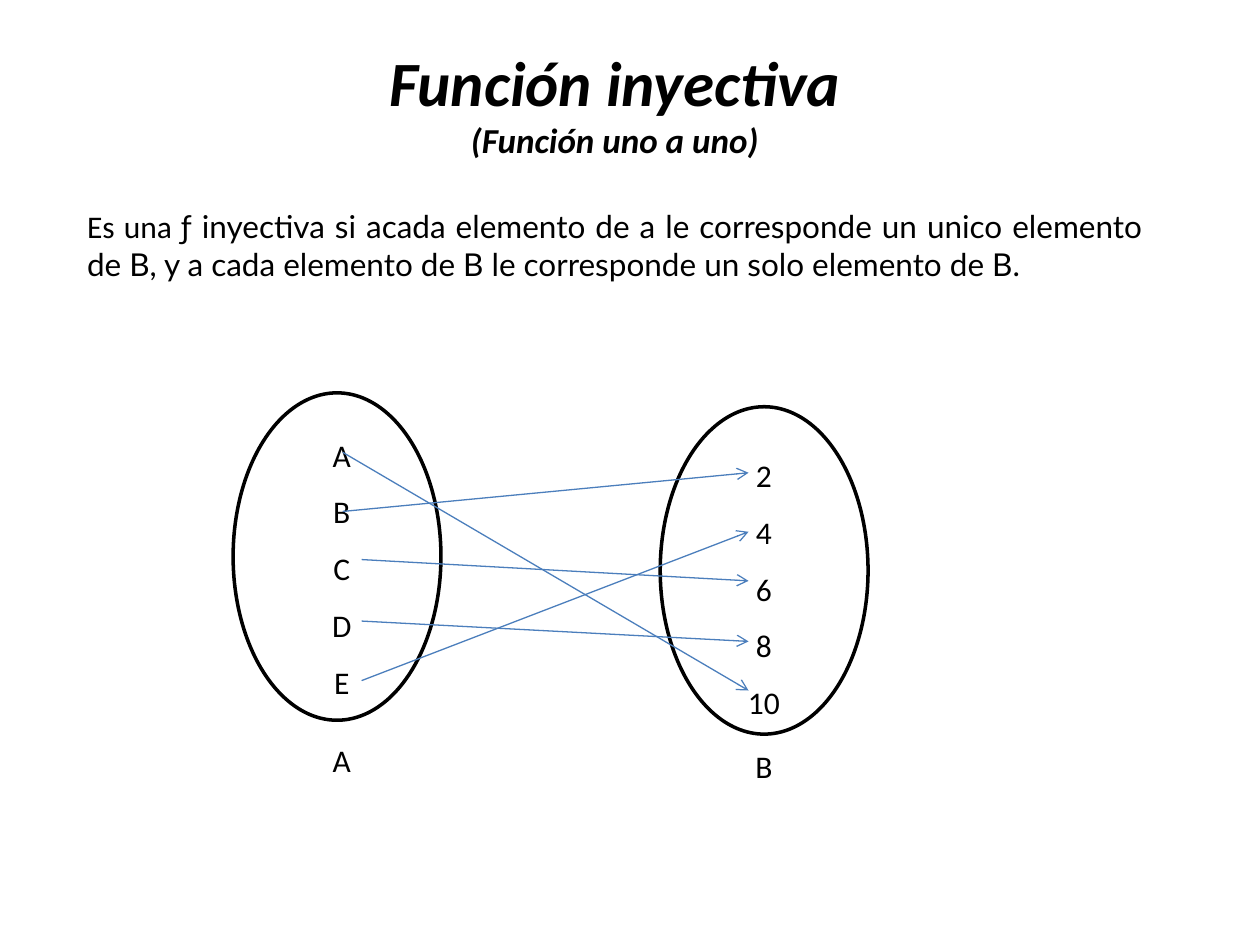
from lxml.etree import SubElement
from pptx import Presentation
from pptx.dml.color import RGBColor
from pptx.enum.shapes import MSO_CONNECTOR, MSO_SHAPE
from pptx.enum.text import MSO_ANCHOR, MSO_AUTO_SIZE, PP_ALIGN
from pptx.oxml.ns import qn
from pptx.util import Cm, Pt

BLACK = RGBColor(0x00, 0x00, 0x00)
BLUE = RGBColor(0x4B, 0x7E, 0xBC)


def place(shape, left, top, width, height):
    shape.left, shape.top = Cm(left), Cm(top)
    shape.width, shape.height = Cm(width), Cm(height)


def write(para, text, align=PP_ALIGN.CENTER, **changes):
    para.alignment = align
    span = para.add_run()
    span.text = text
    span.font.color.rgb = BLACK
    values = {"name": "Calibri", "size": Pt(18), **changes}
    for name, value in values.items():
        setattr(span.font, name, value)


deck = Presentation()
deck.slide_width, deck.slide_height = Cm(25.4), Cm(19.05)
page = deck.slides.add_slide(deck.slide_layouts[1])
title, body = page.placeholders

# Title and subtitle
place(title, 1.5, 0.74, 21.79, 2.64)
frame = title.text_frame
frame.auto_size = MSO_AUTO_SIZE.NONE
frame.vertical_anchor = MSO_ANCHOR.TOP
write(frame.paragraphs[0], "Función inyectiva", size=Pt(36), bold=True, italic=True)
write(frame.add_paragraph(), "(Función uno a uno)", size=Pt(20), bold=True, italic=True)

# Definition, without bullet or indent
place(body, 1.5, 4.04, 21.79, 2.57)
body.text_frame.auto_size = MSO_AUTO_SIZE.NONE
para = body.text_frame.paragraphs[0]
para.space_before = Pt(0)
properties = para._p.get_or_add_pPr()
properties.set("marL", "0")
properties.set("indent", "0")
SubElement(properties, qn("a:buNone"))
write(para, "Es una ", PP_ALIGN.JUSTIFY)
write(para, "ƒ inyectiva si acada elemento de a le corresponde un unico elemento "
      "de B, y a cada elemento de B le corresponde un solo elemento de B.",
      PP_ALIGN.JUSTIFY, name="Lato")

# Sets: oval left and top, text left and top, label top
diagram = page.shapes.add_group_shape().shapes
sets = [
    ("A", "ABCDE", 4.7, 7.92, 5.89, 8.28, 14.81),
    ("B", ["2", "4", "6", "8", "10"], 13.31, 8.2, 14.4, 8.69, 14.94),
]
for label, elements, oval_left, oval_top, text_left, text_top, label_top in sets:
    oval = diagram.add_shape(MSO_SHAPE.OVAL, Cm(oval_left), Cm(oval_top), Cm(4.19), Cm(6.6))
    oval.shadow.inherit = False
    oval.fill.background()
    oval.line.color.rgb = BLACK
    oval.line.width = Pt(2)

    for lines, top, height, spacing in [(elements, text_top, 6.02, 1.5),
                                        ([label], label_top, 1.02, 1.0)]:
        box = diagram.add_textbox(Cm(text_left), Cm(top), Cm(2), Cm(height))
        frame = box.text_frame
        frame.word_wrap = True
        frame.auto_size = MSO_AUTO_SIZE.SHAPE_TO_FIT_TEXT
        for index, line in enumerate(lines):
            para = frame.add_paragraph() if index else frame.paragraphs[0]
            para.line_spacing = spacing
            write(para, line)

# Arrows from A to B: start x, start y, end y
arrows = [
    (6.91, 9.12, 13.92),
    (6.91, 10.31, 9.53),
    (7.29, 11.28, 11.71),
    (7.29, 12.52, 12.93),
    (7.29, 13.72, 10.72),
]
for start_x, start_y, end_y in arrows:
    arrow = diagram.add_connector(MSO_CONNECTOR.STRAIGHT, Cm(start_x), Cm(start_y),
                                  Cm(15.09), Cm(end_y))
    arrow.line.color.rgb = BLUE
    arrow.line.width = Pt(0.75)
    SubElement(arrow.line._get_or_add_ln(), qn("a:tailEnd"), type="arrow")
    SubElement(arrow._element.spPr, qn("a:effectLst"))

deck.save("out.pptx")
